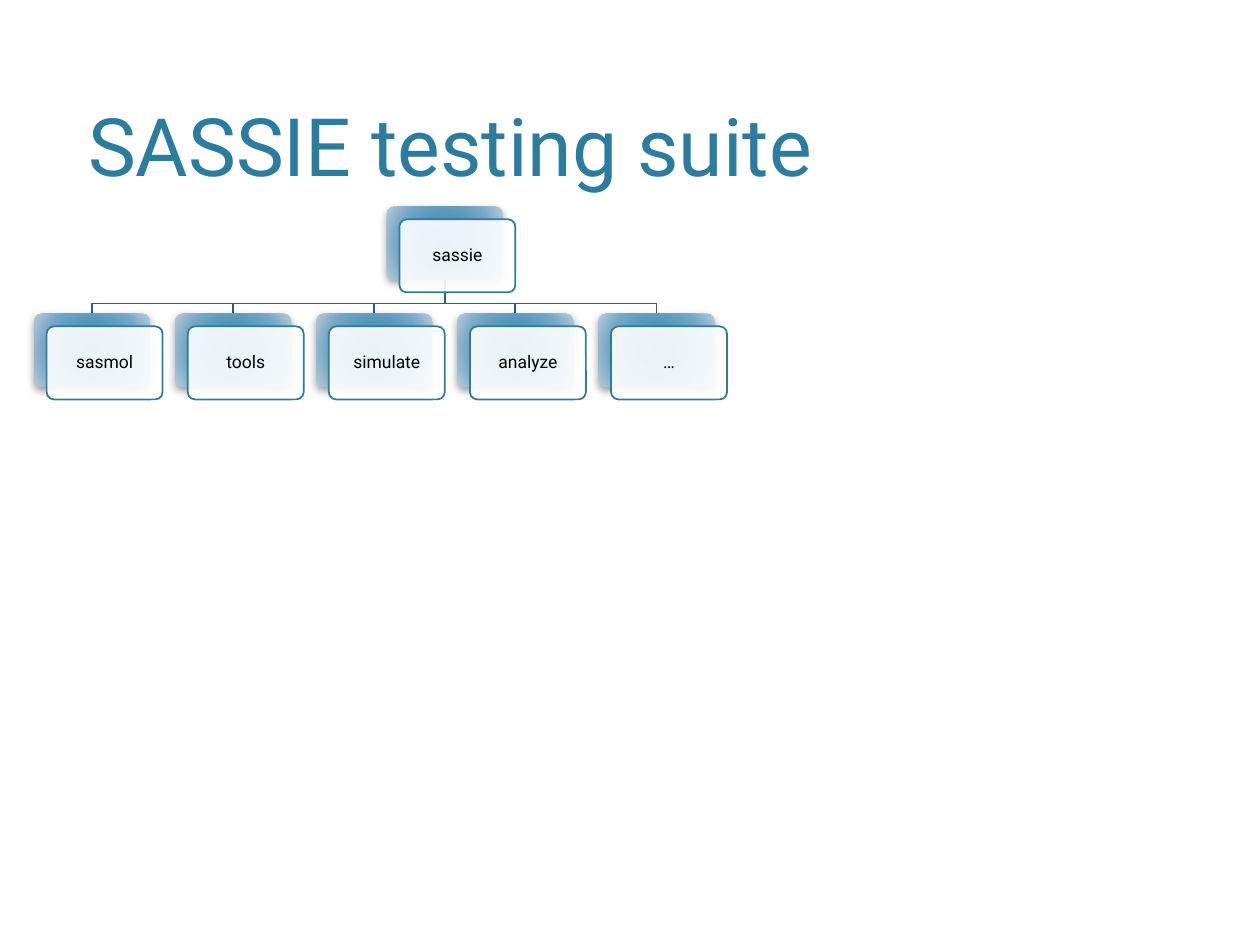
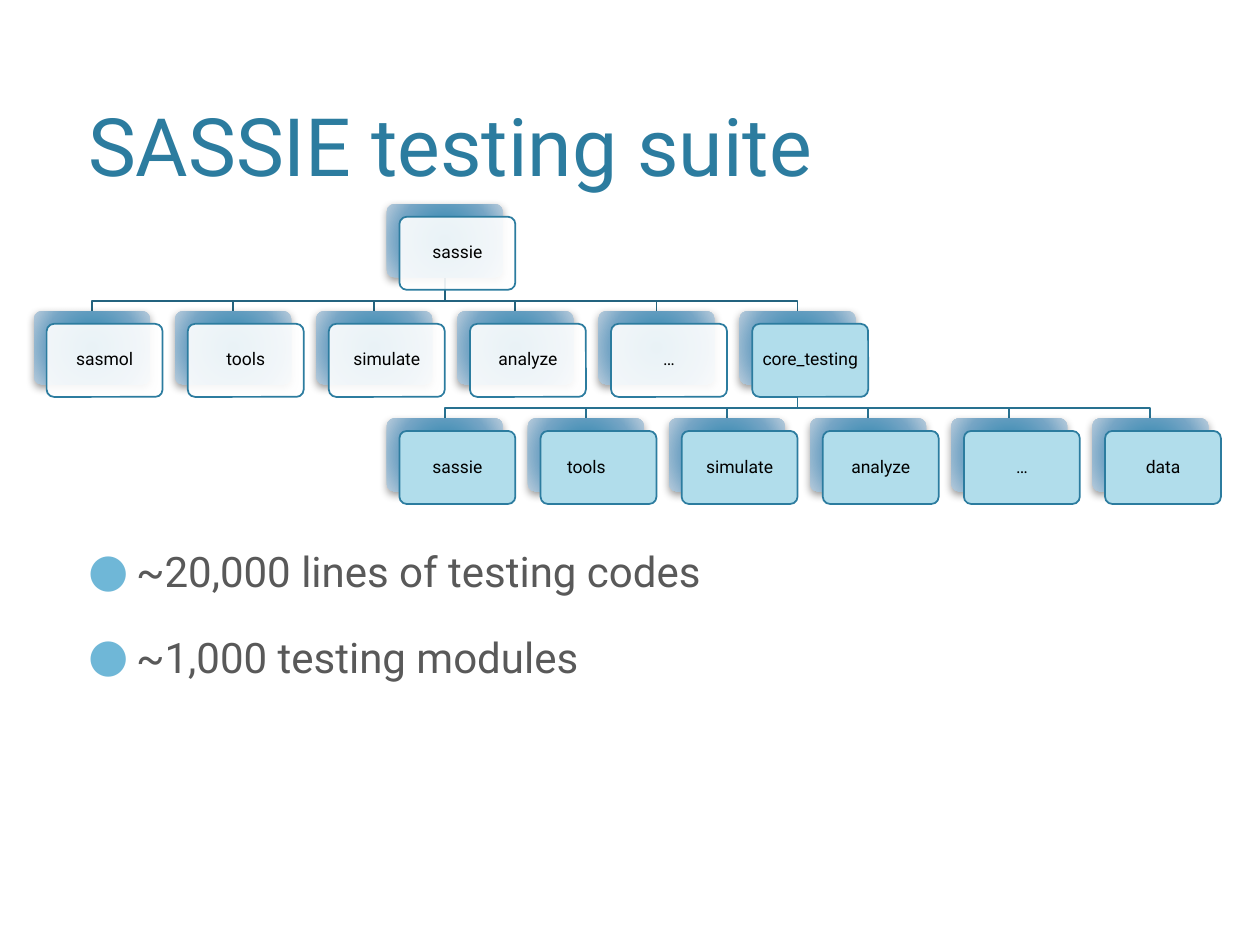
from pptx import Presentation, dml, util as u
from pptx.dml import color
from pptx.enum import shapes, text
from pptx.oxml import parse_xml
from pptx.oxml.ns import nsdecls, qn

TITLE = "SASSIE testing suite"
PACKAGES = ["sasmol", "tools", "simulate", "analyze", "…"]
TEST_PACKAGES = ["sassie", "tools\t", "simulate", "analyze", "…", "data"]
BULLETS = ["~20,000 lines of testing codes", "~1,000 testing modules"]

ROOT_COLUMN = 2.5
CORE_COLUMN = len(PACKAGES)

PACKAGE_TREE = {
    "root": ("sassie", ROOT_COLUMN, 0, "plain"),
    "children": [(name, column, 1, "plain") for column, name in enumerate(PACKAGES)],
    "link": "link",
}
TESTED_TREE = {
    **PACKAGE_TREE,
    "children": PACKAGE_TREE["children"] + [("core_testing", CORE_COLUMN, 1, "testing")],
}
TESTING_TREE = {
    "root": TESTED_TREE["children"][-1],
    "children": [(name, ROOT_COLUMN + index, 2, "testing")
                 for index, name in enumerate(TEST_PACKAGES)],
    "link": "testing_link",
}

SLIDES = [
    {"layout": 5, "top": 1.64, "trees": [PACKAGE_TREE], "bullets": []},
    {"layout": 1, "top": 1.62, "trees": [TESTING_TREE, TESTED_TREE], "bullets": BULLETS},
]

COLORS = {
    "title": "2C7C9F", "body": "595959", "bullet": "6FB7D7", "label": "000000",
    "border": "2C7C9F", "link": "23637F", "testing_link": "287190",
    "plain": "FFFFFF", "testing": "B1DDEB",
    "inner": "2080AB", "middle": "75A5C5", "outer": "B8CCDC",
}
FONT = "Roboto"
WIDTH, HEIGHT = 10, 7.5
LEFT, COLUMN, ROW = 0.27, 1.12, 0.85
CARD_WIDTH, CARD_HEIGHT = 0.92, 0.58
CARD_OFFSET = 0.1
BEND = 0.77
CONTENT_LEFT, CONTENT_WIDTH = 0.06 * WIDTH, 0.88 * WIDTH

GRADIENT = f"""<a:gradFill {nsdecls('a')} rotWithShape="1"><a:gsLst>
<a:gs pos="0"><a:srgbClr val="{COLORS['inner']}"/></a:gs>
<a:gs pos="69000"><a:srgbClr val="{COLORS['middle']}"/></a:gs>
<a:gs pos="100000"><a:srgbClr val="{COLORS['outer']}"/></a:gs></a:gsLst>
<a:path path="circle"><a:fillToRect l="100000" t="100000" r="100000" b="100000"/></a:path>
</a:gradFill>"""
SHADOW = f"""<a:outerShdw {nsdecls('a')} blurRad="63500" dist="25400" dir="5400000" rotWithShape="0">
<a:srgbClr val="000000"><a:alpha val="40000"/></a:srgbClr></a:outerShdw>"""
BULLET_PARTS = [
    f'<a:buClr {nsdecls("a")}><a:srgbClr val="{COLORS["bullet"]}"/></a:buClr>',
    f'<a:buSzPct {nsdecls("a")} val="110000"/>',
    f'<a:buFont {nsdecls("a")} typeface="{FONT}"/>',
    f'<a:buChar {nsdecls("a")} char="●"/>',
]


def rgb(name):
    return color.RGBColor.from_string(COLORS[name])


def place(shape, left, top, width, height):
    shape.left, shape.top = u.Inches(left), u.Inches(top)
    shape.width, shape.height = u.Inches(width), u.Inches(height)


def format_runs(paragraph, size, color_name):
    for run in paragraph.runs:
        run.font.name = FONT
        run.font.size = u.Pt(size)
        run.font.color.rgb = rgb(color_name)


def position(top, node):
    _, column, row, _ = node
    return LEFT + column * COLUMN, top + row * ROW


def add_link(slide, top, parent, child, color_name):
    parent_left, parent_top = position(top, parent)
    child_left, child_top = position(top, child)
    start_x, end_x = parent_left + CARD_WIDTH / 2, child_left + CARD_WIDTH / 2
    bend_y = parent_top + BEND
    builder = slide.shapes.build_freeform(
        u.Inches(start_x), u.Inches(parent_top + CARD_HEIGHT))
    points = [(start_x, bend_y), (end_x, bend_y), (end_x, child_top)]
    builder.add_line_segments([(u.Inches(x), u.Inches(y)) for x, y in points], close=False)
    link = builder.convert_to_shape()
    link.shadow.inherit = False
    link.fill.background()
    link.line.color.rgb = rgb(color_name)
    link.line.width = u.Pt(1)


def add_rounded(slide, left, top):
    shape = slide.shapes.add_shape(
        shapes.MSO_SHAPE.ROUNDED_RECTANGLE, u.Inches(left), u.Inches(top),
        u.Inches(CARD_WIDTH), u.Inches(CARD_HEIGHT))
    shape.adjustments[0] = 0.1
    shape.shadow.inherit = False
    return shape


def add_card(slide, top, node):
    label, _, _, fill = node
    left, card_top = position(top, node)

    back = add_rounded(slide, left, card_top)
    back.line.fill.background()
    back.fill.background()
    properties = back.element.spPr
    properties.replace(properties.find(qn("a:noFill")), parse_xml(GRADIENT))
    properties.find(qn("a:effectLst")).append(parse_xml(SHADOW))

    card = add_rounded(slide, left + CARD_OFFSET, card_top + CARD_OFFSET)
    card.fill.solid()
    card.fill.fore_color.rgb = rgb(fill)
    if fill == "plain":
        fill_color = card.element.spPr.find(qn("a:solidFill"))[0]
        fill_color.append(parse_xml(f'<a:alpha {nsdecls("a")} val="90000"/>'))
    card.line.color.rgb = rgb("border")
    card.line.width = u.Pt(1)

    frame = card.text_frame
    frame.word_wrap = True
    frame.vertical_anchor = text.MSO_ANCHOR.MIDDLE
    frame.margin_left = frame.margin_right = u.Inches(0.06)
    frame.margin_top = frame.margin_bottom = u.Inches(0.06)
    paragraph = frame.paragraphs[0]
    paragraph.text = label
    paragraph.alignment = text.PP_ALIGN.CENTER
    paragraph.line_spacing = 0.9
    format_runs(paragraph, 10, "label")


def add_title(slide):
    title = slide.shapes.title
    place(title, CONTENT_LEFT, 0.12, CONTENT_WIDTH, 1.46)
    frame = title.text_frame
    frame.text = TITLE
    frame.auto_size = text.MSO_AUTO_SIZE.NONE
    frame.vertical_anchor = text.MSO_ANCHOR.BOTTOM
    frame.paragraphs[0].alignment = text.PP_ALIGN.LEFT
    format_runs(frame.paragraphs[0], 46, "title")


def add_bullets(slide, bullets):
    body = slide.placeholders[1]
    place(body, CONTENT_LEFT, 4.28, CONTENT_WIDTH, 1.91)
    frame = body.text_frame
    frame.text = "\n".join(bullets)
    frame.auto_size = text.MSO_AUTO_SIZE.NONE
    for paragraph in frame.paragraphs:
        paragraph.space_before = u.Pt(20)
        format_runs(paragraph, 24, "body")
        properties = paragraph._p.get_or_add_pPr()
        properties.set("marL", str(u.Inches(0.38)))
        properties.set("indent", str(-u.Inches(0.38)))
        for part in BULLET_PARTS:
            properties.append(parse_xml(part))


def add_diagram(slide, top, trees):
    for tree in trees:
        for child in reversed(tree["children"]):
            add_link(slide, top, tree["root"], child, tree["link"])
    nodes = [trees[-1]["root"]]
    for tree in reversed(trees):
        nodes += tree["children"]
    for node in nodes:
        add_card(slide, top, node)


def main():
    presentation = Presentation()
    presentation.slide_width, presentation.slide_height = u.Inches(WIDTH), u.Inches(HEIGHT)
    for content in SLIDES:
        layout = presentation.slide_layouts[content["layout"]]
        slide = presentation.slides.add_slide(layout)
        add_title(slide)
        add_diagram(slide, content["top"], content["trees"])
        if content["bullets"]:
            add_bullets(slide, content["bullets"])
    presentation.save("out.pptx")


if __name__ == "__main__":
    main()
